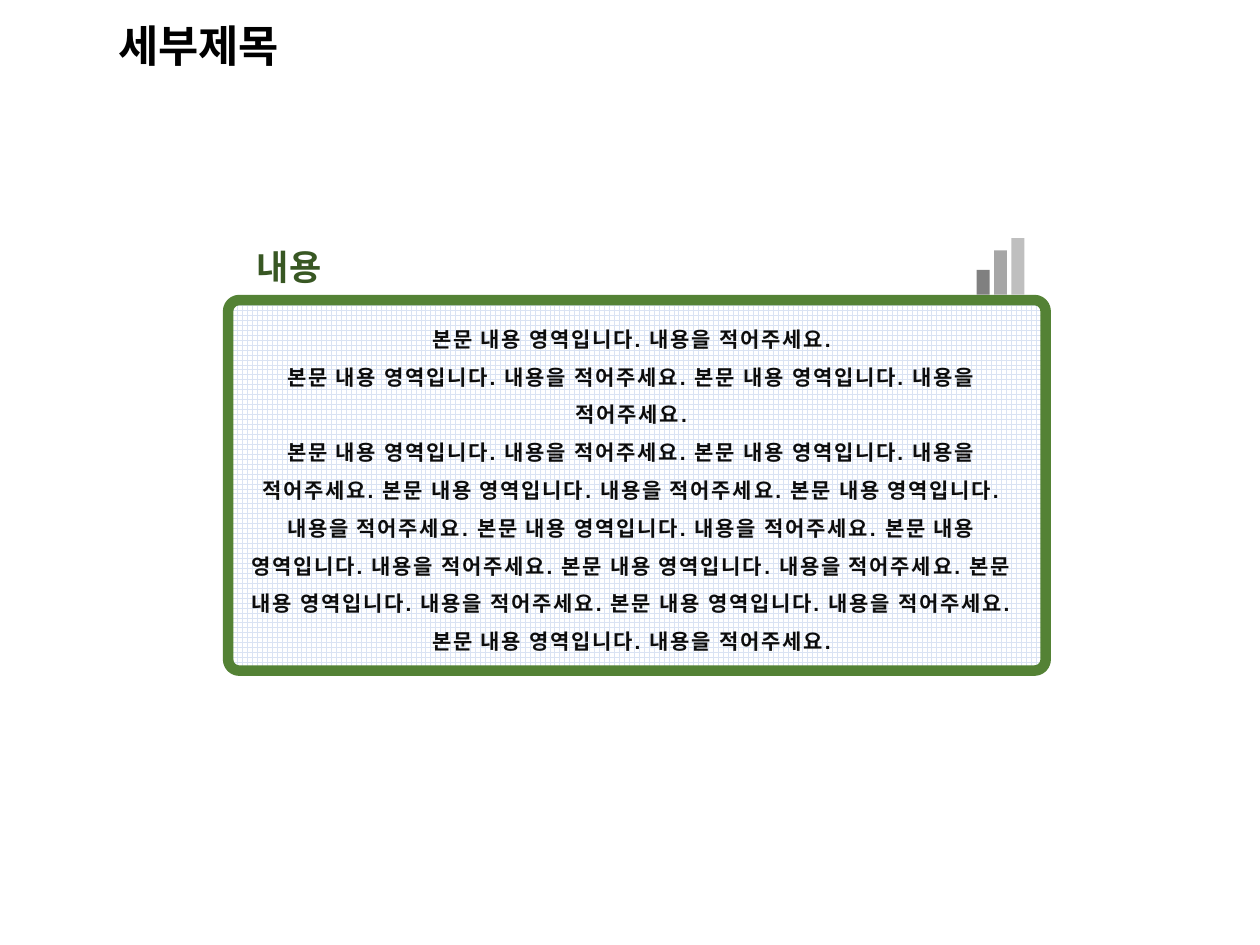
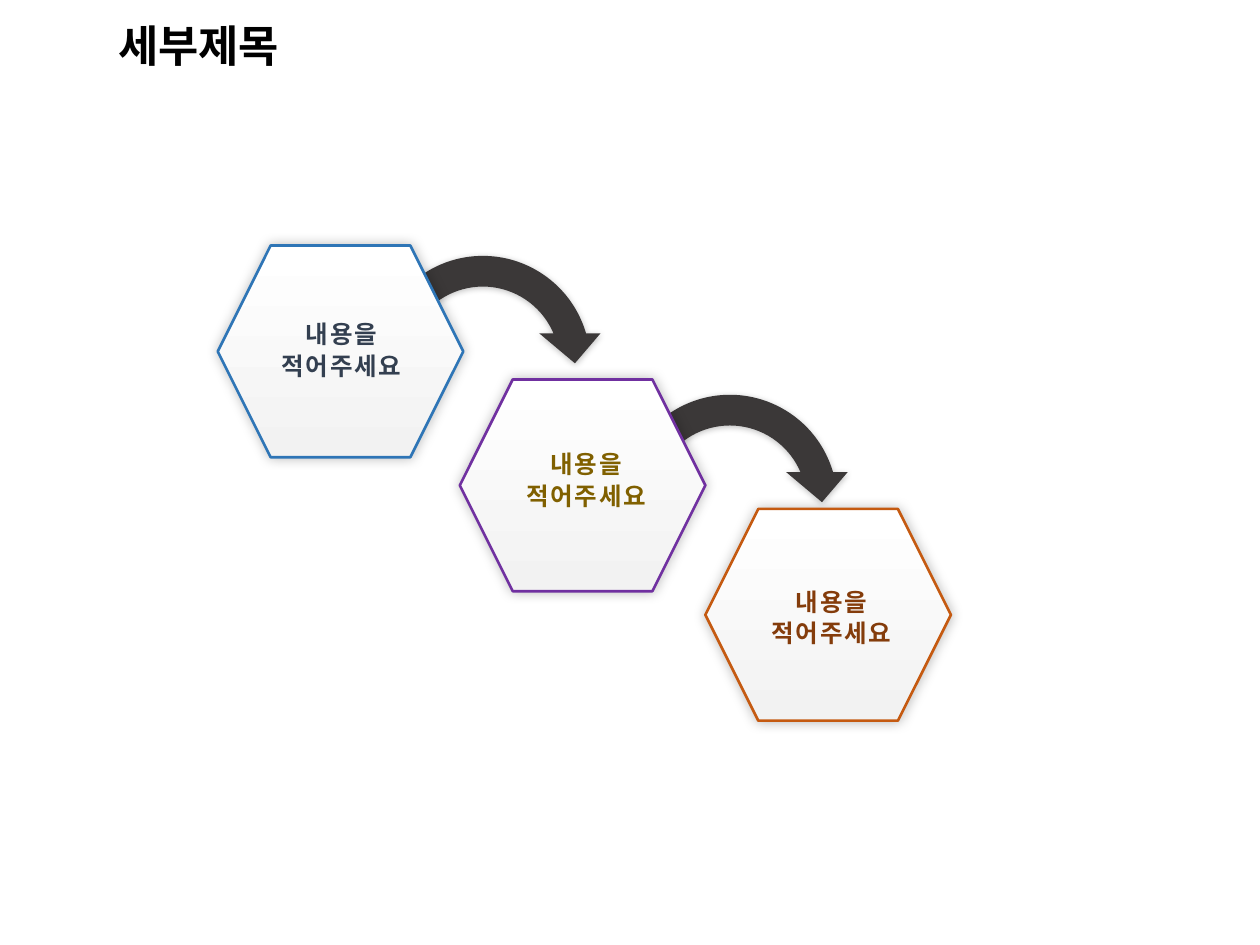
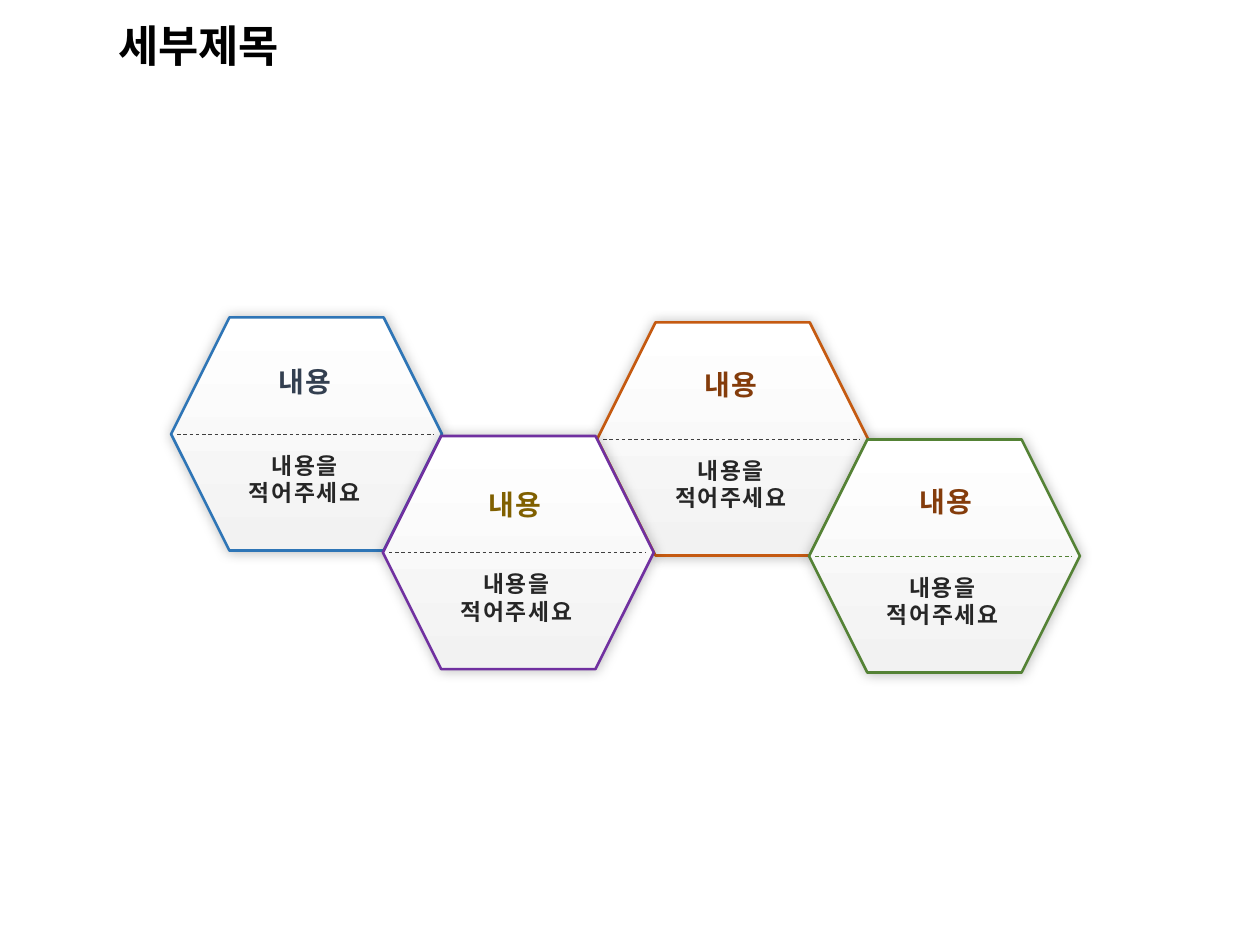
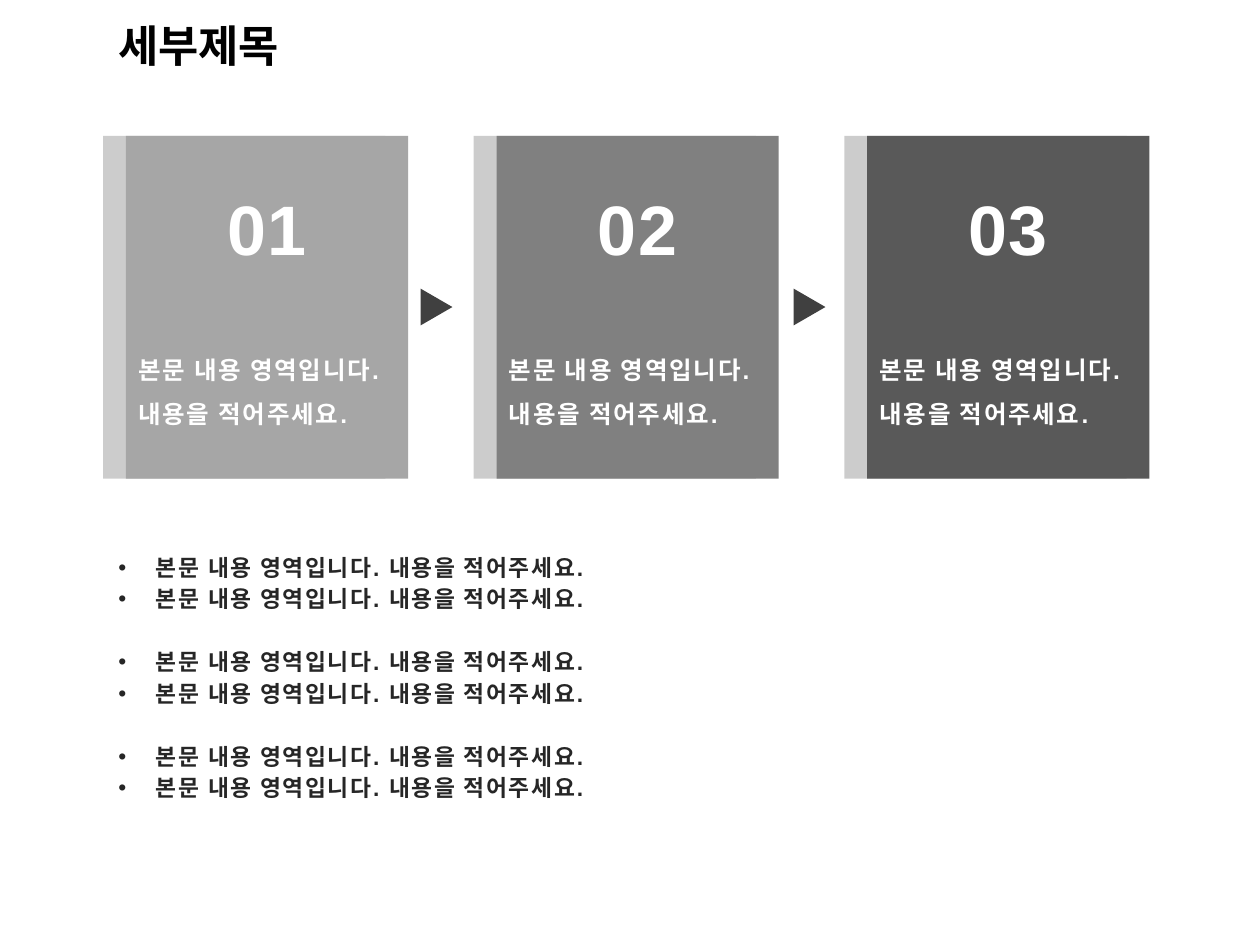
from dataclasses import dataclass
from typing import NamedTuple, Optional

from lxml.etree import SubElement
from pptx import Presentation
from pptx.dml.color import RGBColor
from pptx.enum.dml import MSO_LINE, MSO_PATTERN
from pptx.enum.shapes import MSO_CONNECTOR, MSO_SHAPE as SHAPE
from pptx.enum.text import MSO_ANCHOR as ANCHOR, MSO_AUTO_SIZE as AUTO, PP_ALIGN as ALIGN
from pptx.oxml.ns import qn
from pptx.util import Cm, Pt


@dataclass(frozen=True)
class Theme:
    latin: str = "Arial"
    title_font: str = "Calibri"
    korean: str = "Noto Sans CJK KR"
    # Colours
    black: str = "000000"
    white: str = "FFFFFF"
    ink: str = "0D0D0D"
    body: str = "262626"
    dark: str = "404040"
    arrow: str = "3B3838"
    gray: str = "808080"
    mid_gray: str = "A6A6A6"
    pale_gray: str = "BFBFBF"
    deep_gray: str = "595959"
    grid: str = "DAE3F3"
    fade: str = "F2F2F2"
    blue: str = "2E75B6"
    purple: str = "7030A0"
    orange: str = "C55A11"
    green: str = "548235"
    navy: str = "333F50"
    olive: str = "806000"
    brown: str = "843C0B"
    forest: str = "385723"
    # Type sizes in points
    title_size: int = 25
    number_size: int = 40
    heading_size: int = 20
    label_size: int = 16
    text_size: int = 14
    small_size: int = 13
    panel_size: int = 12


T = Theme()
SENTENCE = "본문 내용 영역입니다. 내용을 적어주세요."
PROMPT = ["내용을", "적어주세요"]
LINE = Pt(18)


class Box(NamedTuple):
    """Left, top, width and height in centimetres."""
    x: float
    y: float
    w: float
    h: float

    def emu(self) -> list:
        return [Cm(v) for v in self]


class Shadow(NamedTuple):
    color: str
    opacity: int
    blur: float
    distance: float
    angle: int


HEX_SHADOW = Shadow(T.black, 25, 7, 0, 0)
ARROW_SHADOW = Shadow(T.black, 25, 4, 1, 90)
CARD_SHADOW = Shadow(T.gray, 40, 0, 13, 180)


class Step(NamedTuple):
    x: float
    y: float
    label_x: float
    label_y: float
    line: str
    ink: str
    divider: str = T.dark


class Card(NamedTuple):
    number: str
    fill: str


def rgb(color: str) -> RGBColor:
    return RGBColor.from_string(color)


# Text
def write(tf, lines: list, *, size: int, color: str, font: str = T.latin, align=ALIGN.LEFT,
          leading=None, tracking: int = 100, bullet: bool = False, group: int = 0) -> None:
    """Fill a text frame; group opens a one-line gap before every group-th paragraph."""
    for i, text in enumerate(lines):
        p = tf.paragraphs[0] if i == 0 else tf.add_paragraph()
        if bullet:
            pPr = p._p.get_or_add_pPr()
            pPr.set("marL", str(Cm(0.76)))
            pPr.set("indent", str(-Cm(0.76)))
            SubElement(pPr, qn("a:buFont")).set("typeface", T.latin)
            SubElement(pPr, qn("a:buChar")).set("char", "•")
        p.alignment = align
        p.space_before = LINE if group and i and i % group == 0 else Pt(0)
        if leading:
            p.line_spacing = leading
        r = p.add_run()
        r.text = text
        r.font.name, r.font.size, r.font.bold = font, Pt(size), True
        r.font.color.rgb = rgb(color)
        rPr = r._r.get_or_add_rPr()
        if tracking:
            rPr.set("spc", str(tracking))
        SubElement(rPr, qn("a:ea")).set("typeface", T.korean)


def add_text(s, box: Box, lines: list, **style) -> None:
    tf = s.shapes.add_textbox(*box.emu()).text_frame
    tf.word_wrap = True
    tf.auto_size = AUTO.SHAPE_TO_FIT_TEXT
    write(tf, lines, **style)


def fill_placeholder(sp, box: Box, lines: list, anchor, **style) -> None:
    sp.left, sp.top, sp.width, sp.height = box.emu()
    tf = sp.text_frame
    tf.auto_size, tf.word_wrap, tf.vertical_anchor = AUTO.NONE, True, anchor
    write(tf, lines, **style)


# Shapes
def add_shape(shapes, kind, box: Box, fill: Optional[str] = None,
              shadow: Optional[Shadow] = None):
    sp = shapes.add_shape(kind, *box.emu())
    sp.line.fill.background()
    if fill:
        sp.fill.solid()
        sp.fill.fore_color.rgb = rgb(fill)
    sp.shadow.inherit = False
    if shadow:
        effects = sp._element.spPr.find(qn("a:effectLst"))
        outer = SubElement(effects, qn("a:outerShdw"), blurRad=str(Pt(shadow.blur)),
                           dist=str(Pt(shadow.distance)), dir=str(shadow.angle * 60000),
                           algn="ctr", rotWithShape="0")
        clr = SubElement(outer, qn("a:srgbClr"), val=shadow.color)
        SubElement(clr, qn("a:alpha"), val=str(shadow.opacity * 1000))
    return sp


def outline(sp, color: str, width: float) -> None:
    sp.line.color.rgb = rgb(color)
    sp.line.width = Pt(width)


def add_hexagon(shapes, box: Box, line: str) -> None:
    sp = add_shape(shapes, SHAPE.HEXAGON, box, shadow=HEX_SHADOW)
    sp.fill.gradient()
    sp.fill.gradient_angle = 270
    for stop, color, position in zip(sp.fill.gradient_stops, (T.white, T.fade), (0, 1)):
        stop.color.rgb = rgb(color)
        stop.position = position
    outline(sp, line, 1.5)


def add_divider(shapes, x: float, y: float, w: float, color: str) -> None:
    cn = shapes.add_connector(MSO_CONNECTOR.STRAIGHT, Cm(x), Cm(y), Cm(x + w), Cm(y))
    outline(cn, color, 0.5)
    cn.line.dash_style = MSO_LINE.DASH
    SubElement(cn._element.spPr, qn("a:effectLst"))


def new_slide(prs, layout: int = 5):
    s = prs.slides.add_slide(prs.slide_layouts[layout])
    fill_placeholder(s.shapes.title, Box(2.13, 0.3, 22.91, 1.35), ["세부제목"], ANCHOR.MIDDLE,
                     size=T.title_size, color=T.black, font=T.title_font, leading=0.9,
                     tracking=0)
    return s


# Slides
def panel_slide(prs) -> None:
    s = new_slide(prs)
    panel = add_shape(s.shapes, SHAPE.ROUNDED_RECTANGLE, Box(4.6, 6.05, 16.48, 7.47))
    panel.adjustments[0] = 0.03
    panel.fill.patterned()
    panel.fill.pattern = MSO_PATTERN.LARGE_GRID
    panel.fill.fore_color.rgb = rgb(T.grid)
    panel.fill.back_color.rgb = rgb(T.white)
    outline(panel, T.green, 6)

    add_text(s, Box(4.6, 4.83, 2.46, 1.12), ["내용"], size=T.heading_size, color=T.forest,
             align=ALIGN.CENTER)
    add_text(s, Box(4.6, 6.2, 16.26, 7.19), [" ".join([SENTENCE] * n) for n in (1, 2, 10)],
             size=T.panel_size, color=T.ink, align=ALIGN.CENTER, leading=1.5)

    # Rising bars standing on the panel
    bars = [(0.5, T.gray), (0.89, T.mid_gray), (1.14, T.pale_gray)]
    for i, (h, color) in enumerate(bars):
        add_shape(s.shapes, SHAPE.RECTANGLE, Box(19.69 + 0.35 * i, 5.94 - h, 0.26, h), color)


def cascade_slide(prs) -> None:
    s = new_slide(prs)
    for x, y in ((12.24, 7.65), (7.26, 4.85)):
        add_shape(s.shapes, SHAPE.CIRCULAR_ARROW, Box(x, y, 4.95, 4.95), T.arrow, ARROW_SHADOW)
    steps = [
        Step(4.39, 4.95, 4.7, 6.27, T.blue, T.navy),
        Step(9.27, 7.65, 9.63, 8.89, T.purple, T.olive),
        Step(14.22, 10.26, 14.58, 11.66, T.orange, T.brown),
    ]
    for step in steps:
        add_hexagon(s.shapes, Box(step.x, step.y, 4.95, 4.27), step.line)
        add_text(s, Box(step.label_x, step.label_y, 4.37, 1.55), PROMPT, size=T.text_size,
                 color=step.ink, font=T.korean, align=ALIGN.CENTER, leading=LINE)


def honeycomb_slide(prs) -> None:
    s = new_slide(prs)
    steps = [
        Step(12.04, 6.5, 12.55, 7.32, T.orange, T.brown),
        Step(3.45, 6.4, 3.96, 7.26, T.blue, T.navy),
        Step(7.72, 8.79, 8.2, 9.75, T.purple, T.olive),
        Step(16.31, 8.86, 16.89, 9.68, T.green, T.brown, T.green),
    ]
    for step in steps:
        cell = s.shapes.add_group_shape().shapes
        add_hexagon(cell, Box(step.x, step.y, 5.46, 4.7), step.line)
        add_divider(cell, step.x + 0.12, step.y + 2.35, 5.18, step.divider)
        add_text(s, Box(step.label_x, step.label_y, 4.37, 0.89), ["내용"], size=T.label_size,
                 color=step.ink, font=T.korean, align=ALIGN.CENTER, leading=LINE)
        add_text(s, Box(step.x + 0.72, step.y + 2.58, 3.94, 1.37), PROMPT, size=T.small_size,
                 color=T.body, font=T.korean, align=ALIGN.CENTER)


def cards_slide(prs) -> None:
    s = new_slide(prs, layout=1)
    left, pitch, width = 2.54, 7.47, 5.69
    cards = [Card("01", T.mid_gray), Card("02", T.gray), Card("03", T.deep_gray)]
    for i, card in enumerate(cards):
        x = left + pitch * i
        add_shape(s.shapes, SHAPE.RECTANGLE, Box(x, 2.74, width, 6.91), card.fill, CARD_SHADOW)
        add_text(s, Box(x, 3.61, width, 1.96), [card.number], size=T.number_size,
                 color=T.white, align=ALIGN.CENTER)
        add_text(s, Box(x, 6.73, width, 1.93), [SENTENCE], size=T.text_size, color=T.white,
                 leading=1.5)
    # Pointers between the cards
    for x in (8.43, 15.95):
        add_shape(s.shapes, SHAPE.ISOSCELES_TRIANGLE, Box(x, 5.87, 0.74, 0.64),
                  T.dark).rotation = 90
    fill_placeholder(s.placeholders[1], Box(2.13, 10.95, 16.43, 5.38), [SENTENCE] * 6,
                     ANCHOR.TOP, size=T.small_size, color=T.body, leading=LINE, bullet=True,
                     group=2)


def main() -> None:
    prs = Presentation()
    prs.slide_width, prs.slide_height = Cm(25.4), Cm(19.05)
    for build in (panel_slide, cascade_slide, honeycomb_slide, cards_slide):
        build(prs)
    prs.save("out.pptx")


if __name__ == "__main__":
    main()
